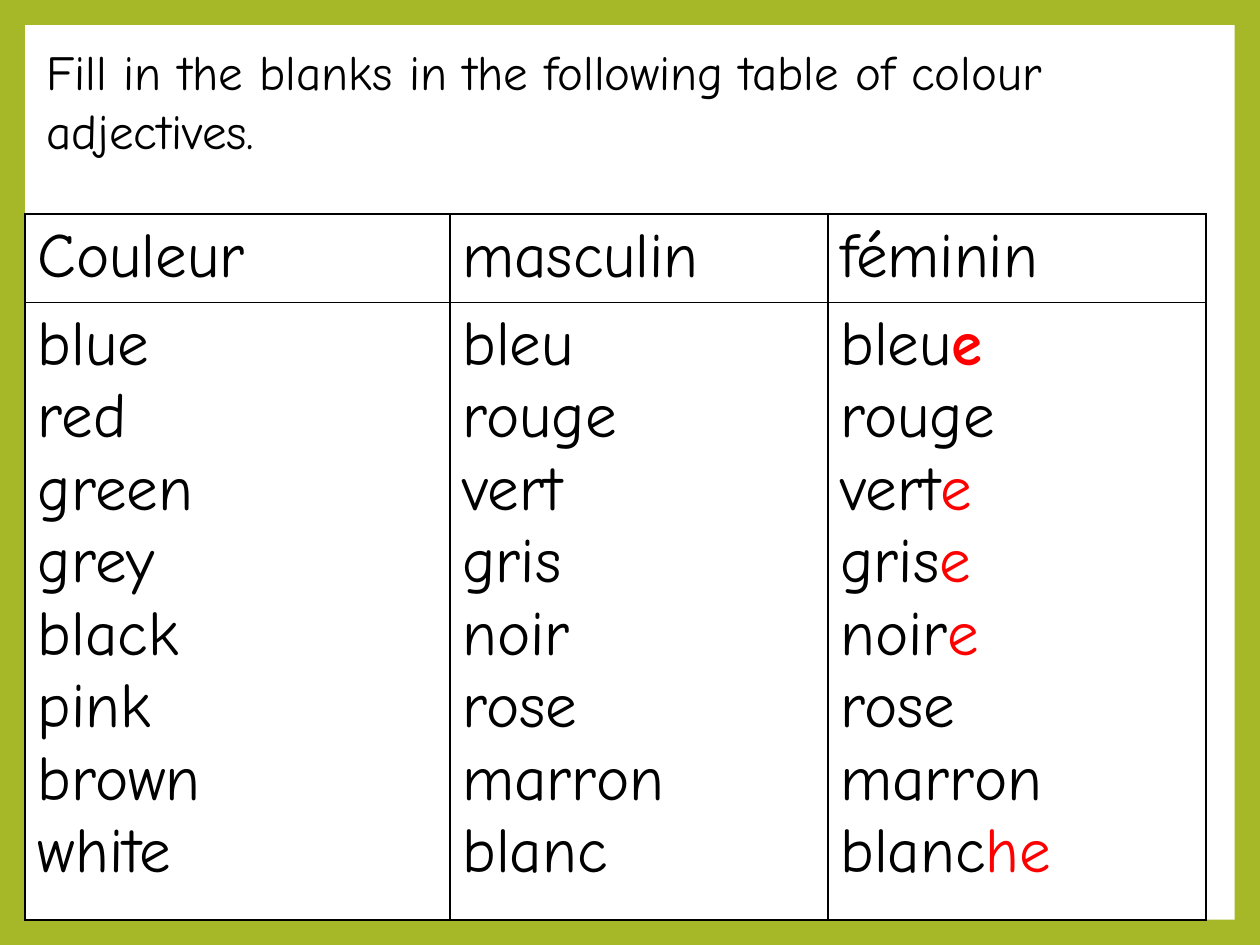
from dataclasses import dataclass

from lxml.etree import SubElement
from pptx import Presentation
from pptx.dml.color import RGBColor
from pptx.enum.shapes import MSO_SHAPE
from pptx.enum.text import MSO_ANCHOR, MSO_AUTO_SIZE, PP_ALIGN
from pptx.oxml.ns import qn
from pptx.slide import Slide
from pptx.table import _Cell
from pptx.util import Inches, Pt


@dataclass(frozen=True)
class Theme:
    font: str = "Comic Neue"
    background: RGBColor = RGBColor(0xA6, 0xB7, 0x27)
    panel: RGBColor = RGBColor(0xFF, 0xFF, 0xFF)
    text: RGBColor = RGBColor(0, 0, 0)
    ending: RGBColor = RGBColor(0xFF, 0, 0)
    border: str = "000000"
    title_size: Pt = Pt(28)
    table_size: Pt = Pt(36)
    border_width: Pt = Pt(1)


@dataclass(frozen=True)
class Colour:
    english: str
    masculine: str
    ending: str = ""
    bold: bool = False


THEME = Theme()
HEADINGS = ("Couleur", "masculin", "féminin")
COLOURS = (
    Colour("blue", "bleu", "e", bold=True),
    Colour("red", "rouge"),
    Colour("green", "vert", "e"),
    Colour("grey", "gris", "e"),
    Colour("black", "noir", "e"),
    Colour("pink", "rose"),
    Colour("brown", "marron"),
    Colour("white", "blanc", "he"),
)
COLUMN_WIDTHS = (3.37, 3, 3)
ROW_HEIGHTS = (0.7, 4.9)


def style_font(font, size: Pt) -> None:
    font.name = THEME.font
    font.size = size
    font.color.rgb = THEME.text


def add_panel(slide: Slide) -> None:
    panel = slide.shapes.add_shape(
        MSO_SHAPE.RECTANGLE, Inches(0.2), Inches(0.2), Inches(9.6), Inches(7.1))
    panel.shadow.inherit = False
    panel.fill.solid()
    panel.fill.fore_color.rgb = THEME.panel
    panel.line.fill.background()


def set_title(slide: Slide, text: str) -> None:
    title = slide.shapes.title
    title.left, title.top = Inches(0.27), Inches(0.28)
    title.width, title.height = Inches(9.29), Inches(1.03)
    title.fill.solid()
    title.fill.fore_color.rgb = THEME.panel
    frame = title.text_frame
    frame.text = text
    frame.word_wrap = True
    frame.auto_size = MSO_AUTO_SIZE.NONE
    frame.vertical_anchor = MSO_ANCHOR.MIDDLE
    paragraph = frame.paragraphs[0]
    paragraph.alignment = PP_ALIGN.LEFT
    style_font(paragraph.font, THEME.title_size)
    # Bring the title in front of the panel
    slide.shapes._spTree.append(title._element)


def format_cell(cell: _Cell) -> None:
    properties = cell._tc.get_or_add_tcPr()
    for side in ("a:lnL", "a:lnR", "a:lnT", "a:lnB"):
        line = SubElement(properties, qn(side), w=str(THEME.border_width))
        fill = SubElement(line, qn("a:solidFill"))
        SubElement(fill, qn("a:srgbClr"), val=THEME.border)
    cell.fill.solid()
    cell.fill.fore_color.rgb = THEME.panel
    for paragraph in cell.text_frame.paragraphs:
        paragraph.font.bold = False
        style_font(paragraph.font, THEME.table_size)


def add_endings(cell: _Cell) -> None:
    for paragraph, colour in zip(cell.text_frame.paragraphs, COLOURS):
        if colour.ending:
            run = paragraph.add_run()
            run.text = colour.ending
            run.font.color.rgb = THEME.ending
            if colour.bold:
                run.font.bold = True


def add_colour_table(slide: Slide) -> None:
    table = slide.shapes.add_table(
        len(ROW_HEIGHTS), len(COLUMN_WIDTHS), Inches(0.2), Inches(1.7),
        Inches(sum(COLUMN_WIDTHS)), Inches(sum(ROW_HEIGHTS))).table
    table.horz_banding = False
    table.first_row = False
    for column, width in zip(table.columns, COLUMN_WIDTHS):
        column.width = Inches(width)
    for row, height in zip(table.rows, ROW_HEIGHTS):
        row.height = Inches(height)

    english = "\n".join(colour.english for colour in COLOURS)
    masculine = "\n".join(colour.masculine for colour in COLOURS)
    for index, words in enumerate((english, masculine, masculine)):
        table.cell(0, index).text = HEADINGS[index]
        table.cell(1, index).text = words
    for cell in table.iter_cells():
        format_cell(cell)
    add_endings(table.cell(1, 2))


def main() -> None:
    presentation = Presentation()
    presentation.slide_width, presentation.slide_height = Inches(10), Inches(7.5)
    slide = presentation.slides.add_slide(presentation.slide_layouts[5])
    slide.background.fill.solid()
    slide.background.fill.fore_color.rgb = THEME.background

    add_panel(slide)
    set_title(slide, "Fill in the blanks in the following table of colour adjectives.")
    add_colour_table(slide)
    presentation.save("out.pptx")


if __name__ == "__main__":
    main()
